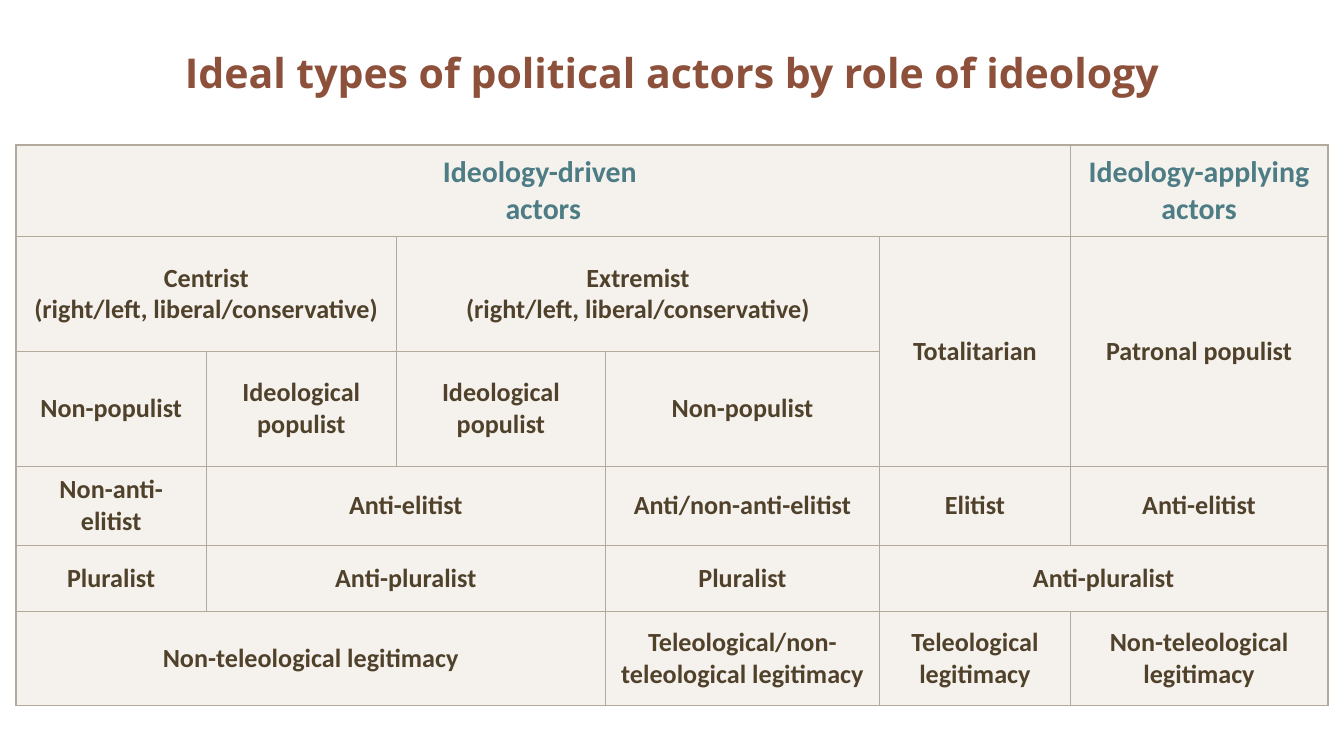
from dataclasses import dataclass

from lxml.etree import SubElement
from pptx import Presentation
from pptx.dml.color import RGBColor
from pptx.enum.text import MSO_ANCHOR as Anchor, PP_ALIGN as Align
from pptx.oxml.ns import qn
from pptx.util import Emu, Pt

EMU_PER_PX = 4572
COLUMNS = [283, 283, 311, 408, 284, 383]
ROWS = [136, 171, 171, 118, 98, 140]
BROWN, TEAL, DARK = "8D503B", "4D7C85", "50412B"
CELL_FILL, BORDER = "EFEAE4", "B3AA9D"
CELL_OPACITY = 60
HEADING_INSETS, INSETS, NO_INSETS = (20, 10), (20, 8), (0, 0)


@dataclass(frozen=True)
class Entry:
    """One table cell, with its place, its span and its insets."""
    row: int
    column: int
    text: str
    across: int = 1
    down: int = 1
    insets: tuple[int, int] = NO_INSETS
    size: int = 14
    color: str = DARK


ENTRIES = [
    Entry(0, 0, "Ideology-driven \nactors", 5, 1, HEADING_INSETS, 16, TEAL),
    Entry(0, 5, "Ideology-applying actors", 1, 1, HEADING_INSETS, 16, TEAL),
    Entry(1, 0, "Centrist\n(right/left, liberal/conservative)", 2, 1, INSETS),
    Entry(1, 2, "Extremist\n(right/left, liberal/conservative)", 2, 1, INSETS),
    Entry(1, 4, "Totalitarian", 1, 2, INSETS),
    Entry(1, 5, "Patronal populist", 1, 2),
    Entry(2, 0, "Non-populist", insets=INSETS),
    Entry(2, 1, "Ideological populist"),
    Entry(2, 2, "Ideological populist", insets=INSETS),
    Entry(2, 3, "Non-populist"),
    Entry(3, 0, "Non-anti-elitist", insets=INSETS),
    Entry(3, 1, "Anti-elitist", 2),
    Entry(3, 3, "Anti/non-anti-elitist"),
    Entry(3, 4, "Elitist", insets=INSETS),
    Entry(3, 5, "Anti-elitist"),
    Entry(4, 0, "Pluralist", insets=INSETS),
    Entry(4, 1, "Anti-pluralist", 2),
    Entry(4, 3, "Pluralist"),
    Entry(4, 4, "Anti-pluralist", 2),
    Entry(5, 0, "Non-teleological legitimacy", 3, 1, INSETS),
    Entry(5, 3, "Teleological/non-teleological legitimacy"),
    Entry(5, 4, "Teleological legitimacy"),
    Entry(5, 5, "Non-teleological legitimacy"),
]


def px(length: int) -> Emu:
    """Turn px into EMU."""
    return Emu(length * EMU_PER_PX)


def rgb(value: str) -> RGBColor:
    """Turn a hex string into a colour."""
    return RGBColor.from_string(value)


def write(frame, text: str, font: str, size: int, color: str) -> None:
    """Fill a text frame with centred bold text."""
    frame.text = text
    for para in frame.paragraphs:
        para.alignment = Align.CENTER
        for span in para.runs:
            span.font.name = font
            span.font.size = Pt(size)
            span.font.bold = True
            span.font.color.rgb = rgb(color)


def paint(cell, entry: Entry) -> None:
    """Give a cell its borders, heavier on the table's outline, and its fill."""
    outline = {
        "L": entry.column == 0,
        "R": entry.column + entry.across == len(COLUMNS),
        "T": entry.row == 0,
        "B": entry.row + entry.down == len(ROWS),
    }
    properties = cell._tc.get_or_add_tcPr()
    for side, outer in outline.items():
        line = SubElement(properties, qn(f"a:ln{side}"), w=str(Pt(1 if outer else 0.5)))
        SubElement(SubElement(line, qn("a:solidFill")), qn("a:srgbClr"), val=BORDER)
    cell.fill.solid()
    cell.fill.fore_color.rgb = rgb(CELL_FILL)
    tint = properties.find(qn("a:solidFill")).find(qn("a:srgbClr"))
    SubElement(tint, qn("a:alpha"), val=str(CELL_OPACITY * 1000))


def add_entry(table, entry: Entry) -> None:
    """Merge, paint and write one table entry."""
    last_row = entry.row + entry.down - 1
    last_column = entry.column + entry.across - 1
    cell = table.cell(entry.row, entry.column)
    if entry.across * entry.down > 1:
        cell.merge(table.cell(last_row, last_column))
    for row in range(entry.row, last_row + 1):
        for column in range(entry.column, last_column + 1):
            paint(table.cell(row, column), entry)
    side, end = entry.insets
    cell.margin_left = cell.margin_right = px(side)
    cell.margin_top = cell.margin_bottom = px(end)
    cell.vertical_anchor = Anchor.MIDDLE
    write(cell.text_frame, entry.text, "Calibri", entry.size, entry.color)


def add_actor_table(page) -> None:
    """Draw the table of actor types."""
    frame = page.shapes.add_table(len(ROWS), len(COLUMNS), px(24), px(216),
                                  px(sum(COLUMNS)), px(sum(ROWS)))
    table = frame.table
    table.first_row = table.horz_banding = False
    for column, width in zip(table.columns, COLUMNS):
        column.width = px(width)
    for row, height in zip(table.rows, ROWS):
        row.height = px(height)
    for entry in ENTRIES:
        add_entry(table, entry)


def main() -> None:
    """Build the slide and save it."""
    deck = Presentation()
    deck.slide_width, deck.slide_height = px(2000), px(1125)
    page = deck.slides.add_slide(deck.slide_layouts[5])
    title = page.shapes.title
    title.left, title.top, title.width, title.height = px(24), px(0), px(1952), px(216)
    title.text_frame.vertical_anchor = Anchor.MIDDLE
    write(title.text_frame, "Ideal types of political actors by role of ideology",
          "Open Sans", 22, BROWN)
    add_actor_table(page)
    deck.save("out.pptx")


if __name__ == "__main__":
    main()
